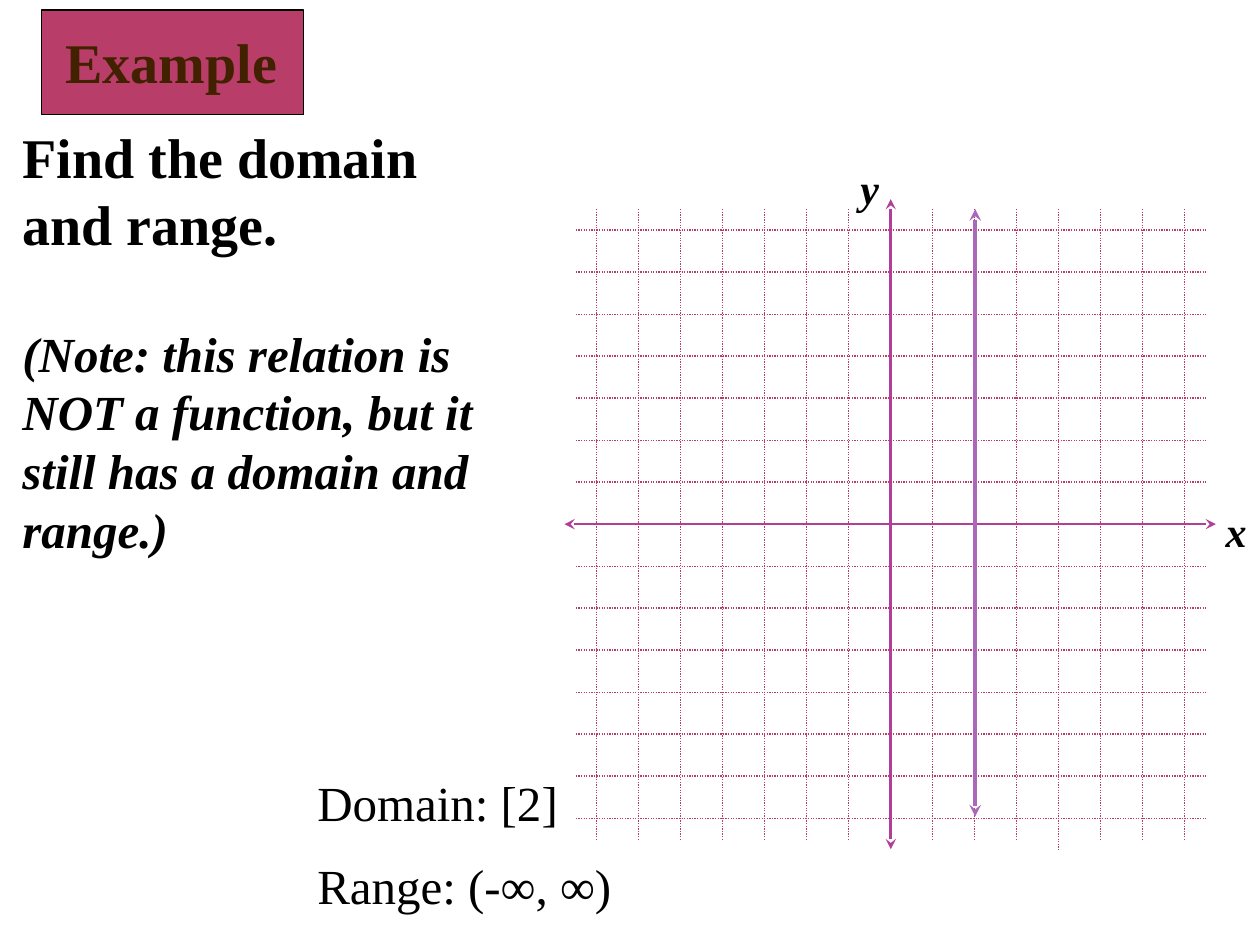
from dataclasses import dataclass

from pptx import Presentation
from pptx.dml.color import RGBColor
from pptx.enum.dml import MSO_LINE
from pptx.enum.shapes import MSO_CONNECTOR
from pptx.enum.text import MSO_ANCHOR, MSO_AUTO_SIZE, PP_ALIGN
from pptx.oxml.ns import qn
from pptx.util import Inches, Pt
from lxml.etree import SubElement

FONT = "Times New Roman"
COLORS = {
    "text": "000000",
    "title": "422100",
    "grid": "B83D68",
    "axis": "B13F9A",
    "relation": "AC66BB",
}
ORIGIN_X, ORIGIN_Y = 7.07, 4.16
UNIT = 1 / 3
UNITS = [n for n in range(-7, 8) if n != 0]
GRID_LEFT, GRID_RIGHT = 4.57, 9.57
GRID_TOP, GRID_BOTTOM = 1.66, 6.66
LONG_LINE = 4  # this vertical grid line reaches the end of the y axis
AXIS_BOTTOM = 6.74


@dataclass
class Line:
    x1: float
    y1: float
    x2: float
    y2: float
    color: str = "grid"
    width: float = 0.75
    arrows: bool = False


@dataclass
class Para:
    text: str
    size: int
    bold: bool = False
    italic: bool = False
    before: int = 0


@dataclass
class TextBox:
    left: float
    top: float
    width: float
    height: float
    paras: list[Para]
    wrap: bool = True


def rgb(name: str) -> RGBColor:
    return RGBColor.from_string(COLORS[name])


def draw_line(s, line: Line) -> None:
    """Arrowed lines are solid, the others dotted."""
    c = s.shapes.add_connector(
        MSO_CONNECTOR.STRAIGHT,
        *(Inches(v) for v in (line.x1, line.y1, line.x2, line.y2)),
    )
    c.line.color.rgb = rgb(line.color)
    c.line.width = Pt(line.width)
    if line.arrows:
        ln = c.line._get_or_add_ln()
        for end in ("a:headEnd", "a:tailEnd"):
            SubElement(ln, qn(end), type="stealth")
    else:
        c.line.dash_style = MSO_LINE.ROUND_DOT
    SubElement(c._element.spPr, qn("a:effectLst"))


def format_para(p, para: Para, color: str = "text") -> None:
    p.text = para.text
    p.alignment = PP_ALIGN.LEFT
    p.space_before = Pt(para.before)
    f = p.font
    f.name, f.size = FONT, Pt(para.size)
    f.bold, f.italic = para.bold, para.italic
    f.color.rgb = rgb(color)


def draw_text(s, box: TextBox) -> None:
    sp = s.shapes.add_textbox(
        *(Inches(v) for v in (box.left, box.top, box.width, box.height))
    )
    tf = sp.text_frame
    tf.word_wrap = box.wrap
    for i, para in enumerate(box.paras):
        format_para(tf.add_paragraph() if i else tf.paragraphs[0], para)


def draw_title(s, para: Para) -> None:
    sp = s.shapes.title
    sp.left, sp.top = Inches(0.33), Inches(0.08)
    sp.width, sp.height = Inches(2.08), Inches(0.83)
    sp.fill.solid()
    sp.fill.fore_color.rgb = rgb("grid")
    sp.line.color.rgb = rgb("text")
    sp.line.width = Pt(0.75)
    tf = sp.text_frame
    tf.auto_size = MSO_AUTO_SIZE.NONE
    tf.vertical_anchor = MSO_ANCHOR.TOP
    tf.margin_left, tf.margin_top = Inches(0.19), Inches(0.14)
    format_para(tf.paragraphs[0], para, "title")


def graph_lines() -> list[Line]:
    axes = [
        Line(ORIGIN_X, 1.58, ORIGIN_X, AXIS_BOTTOM, "axis", 1.5, True),
        Line(4.48, ORIGIN_Y, 9.65, ORIGIN_Y, "axis", 1.5, True),
    ]
    rows = [
        Line(GRID_LEFT, y, GRID_RIGHT, y)
        for y in (ORIGIN_Y + n * UNIT for n in UNITS)
    ]
    columns = [
        Line(ORIGIN_X + n * UNIT, GRID_TOP, ORIGIN_X + n * UNIT,
             AXIS_BOTTOM if n == LONG_LINE else GRID_BOTTOM)
        for n in UNITS
    ]
    relation = Line(7.74, GRID_TOP, 7.74, 6.48, "relation", 2.25, True)
    return axes + rows + columns + [relation]


TEXTS = [
    TextBox(0.08, 0.92, 3.89, 3.6, [
        Para("Find the domain and range.", 32, bold=True),
        Para("(Note: this relation is NOT a function, but it still has a "
             "domain and range.)", 28, bold=True, italic=True, before=38),
    ]),
    TextBox(2.42, 6.08, 3.79, 1.97, [
        Para("Domain: [2]", 28),
        Para("Range: (-∞, ∞)", 28, before=14),
    ]),
    TextBox(9.63, 3.96, 0.37, 0.5, [Para("x", 24, True, True)], wrap=False),
    TextBox(6.73, 1.24, 0.35, 0.5, [Para("y", 24, True, True)], wrap=False),
]


def main() -> None:
    prs = Presentation()
    prs.slide_width, prs.slide_height = Inches(10), Inches(7.5)
    s = prs.slides.add_slide(prs.slide_layouts[5])
    draw_title(s, Para("Example", 32, bold=True))
    for line in graph_lines():
        draw_line(s, line)
    for box in TEXTS:
        draw_text(s, box)
    prs.save("out.pptx")


if __name__ == "__main__":
    main()
